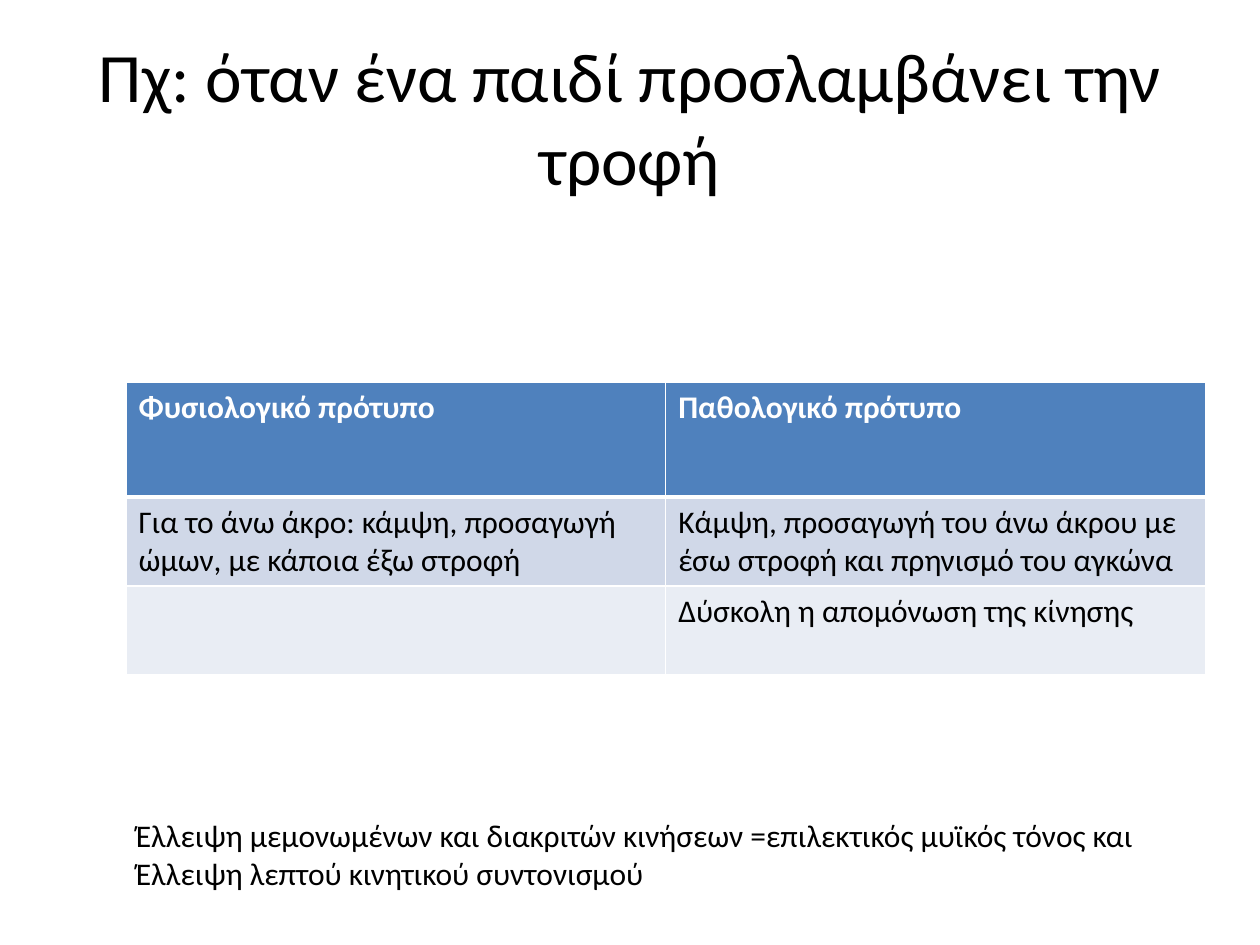
from dataclasses import dataclass

from lxml import etree
from pptx import Presentation
from pptx.dml.color import RGBColor
from pptx.enum.text import MSO_ANCHOR, PP_ALIGN
from pptx.oxml.ns import qn
from pptx.util import Cm, Pt

LEFT, CENTER = PP_ALIGN.LEFT, PP_ALIGN.CENTER
TOP, MIDDLE = MSO_ANCHOR.TOP, MSO_ANCHOR.MIDDLE
BLACK = RGBColor(0x00, 0x00, 0x00)
WHITE = RGBColor(0xFF, 0xFF, 0xFF)
BLUE = RGBColor(0x4F, 0x81, 0xBD)
BAND = RGBColor(0xD0, 0xD8, 0xE8)
PALE = RGBColor(0xE9, 0xED, 0xF4)


@dataclass
class Label:
    text: str
    box: tuple
    size: float
    align: PP_ALIGN = LEFT
    anchor: MSO_ANCHOR = TOP


@dataclass
class Row:
    cells: tuple
    height: float
    fill: RGBColor
    color: RGBColor = BLACK
    bold: bool = False
    rule: float = 1


LABELS = [
    Label("Πχ: όταν ένα παιδί προσλαμβάνει την τροφή",
          (1.27, 0.76, 22.86, 3.18), 39.6, CENTER, MIDDLE),
    Label("Έλλειψη μεμονωμένων και διακριτών κινήσεων =επιλεκτικός μυϊκός "
          "τόνος και Έλλειψη λεπτού κινητικού συντονισμού",
          (2.49, 16.33, 22.2, 1.8), 18),
]
ROWS = [
    Row(("Φυσιολογικό πρότυπο", "Παθολογικό πρότυπο"),
        2.32, BLUE, WHITE, True, 3),
    Row(("Για το άνω άκρο: κάμψη, προσαγωγή ώμων, με κάποια έξω στροφή",
         "Κάμψη, προσαγωγή του άνω άκρου με έσω στροφή και πρηνισμό του αγκώνα"),
        1.79, BAND),
    Row(("", "Δύσκολη η απομόνωση της κίνησης"), 1.79, PALE),
]


def style(font, color: RGBColor, **form) -> None:
    for key, value in {"name": "Calibri", **form}.items():
        setattr(font, key, value)
    font.color.rgb = color


def add_label(slide, label: Label) -> None:
    frame = slide.shapes.add_textbox(*map(Cm, label.box)).text_frame
    frame.word_wrap = True
    frame.vertical_anchor = label.anchor
    para = frame.paragraphs[0]
    para.text, para.alignment = label.text, label.align
    style(para.runs[0].font, BLACK, size=Pt(label.size))


def add_edges(cell, widths: dict) -> None:
    """Rule the cell in white; the lines must come before its fill."""
    props = cell._tc.get_or_add_tcPr()
    for spot, (side, width) in enumerate(widths.items()):
        line = etree.Element(qn(f"a:ln{side}"), w=str(Pt(width)))
        fill = etree.SubElement(line, qn("a:solidFill"))
        etree.SubElement(fill, qn("a:srgbClr"), val=str(WHITE))
        props.insert(spot, line)


def add_grid(slide, rows: list[Row]) -> None:
    high = sum(row.height for row in rows)
    grid = slide.shapes.add_table(
        len(rows), 2, Cm(2.54), Cm(7.7), Cm(21.76), Cm(high)).table
    above = 1
    for line, row in zip(grid.rows, rows):
        line.height = Cm(row.height)
        for cell, text in zip(line.cells, row.cells):
            cell.fill.solid()
            cell.fill.fore_color.rgb = row.fill
            add_edges(cell, {"L": 1, "R": 1, "T": above, "B": row.rule})
            para = cell.text_frame.paragraphs[0]
            font = para.font
            if text:
                para.text = text
                font = para.runs[0].font
            style(font, row.color, size=Pt(18), bold=row.bold)
        above = row.rule


def main() -> None:
    deck = Presentation()
    deck.slide_width, deck.slide_height = Cm(25.4), Cm(19.05)
    slide = deck.slides.add_slide(deck.slide_layouts[6])
    title, note = LABELS
    add_label(slide, title)
    add_grid(slide, ROWS)
    add_label(slide, note)
    deck.save("out.pptx")


if __name__ == "__main__":
    main()
